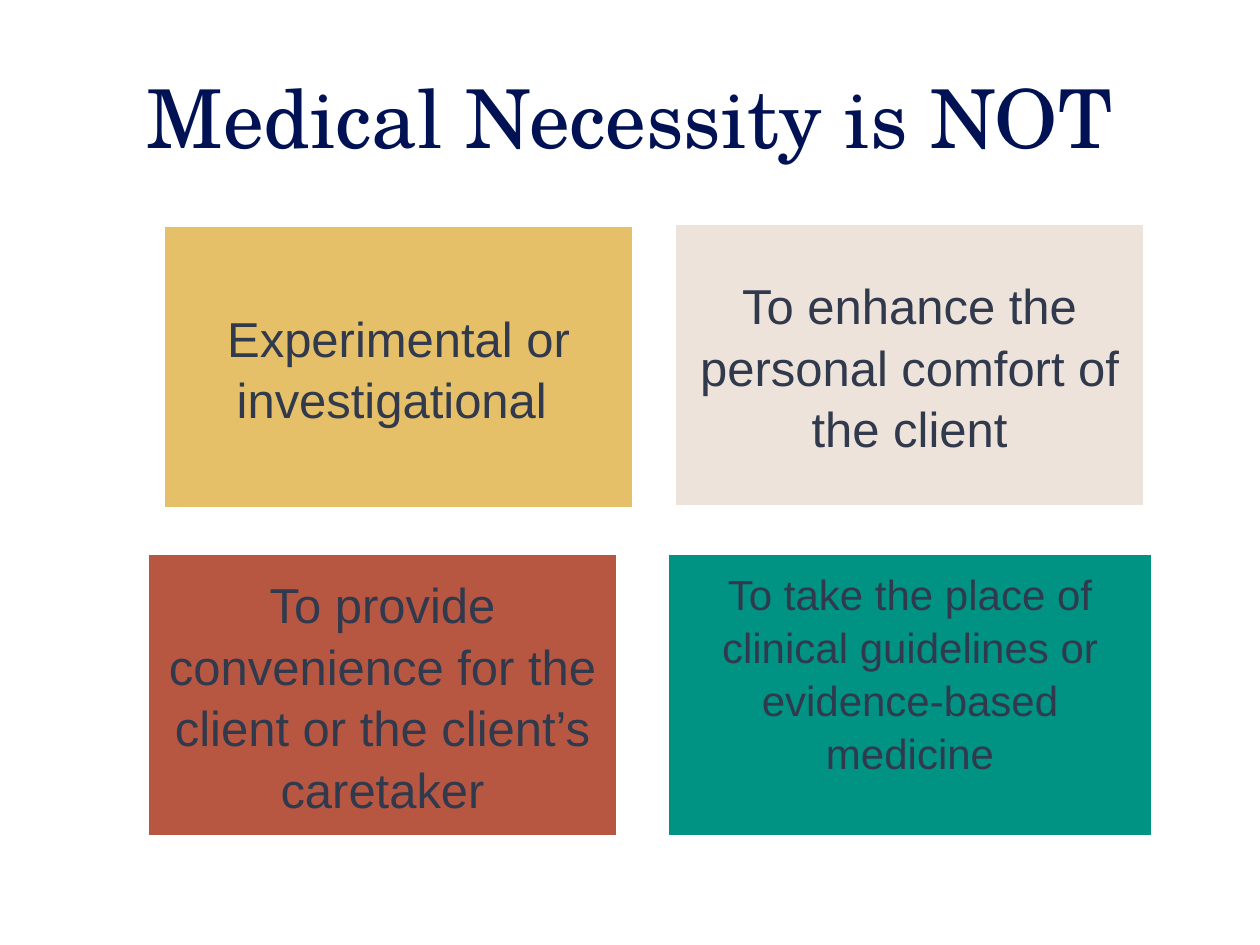
from dataclasses import dataclass

import pptx
import pptx.dml.color
import pptx.enum.shapes
import pptx.enum.text
import pptx.util

PX_PER_INCH = 126
EMU_PER_PX = 914400 / PX_PER_INCH
CARD_HEIGHT = 284
TEXT_COLOR = "31394D"
MIDDLE = pptx.enum.text.MSO_ANCHOR.MIDDLE
TOP = pptx.enum.text.MSO_ANCHOR.TOP


@dataclass
class Card:
    text: str
    fill: str
    left: int
    top: int
    width: int = 471
    size: int = 28
    inset: int = 15
    anchor: pptx.enum.text.MSO_ANCHOR = MIDDLE


CARDS = [
    Card("Experimental or investigational ", "E6C068", 163, 225),
    Card("To enhance the personal comfort of the client", "EDE3DA", 674, 223),
    Card("To provide convenience for the client or the client’s caretaker", "B85741", 147, 553),
    Card("To take the place of clinical guidelines or evidence-based medicine", "009384",
         667, 553, width=486, size=24, inset=13, anchor=TOP),
]


def px(length: int) -> pptx.util.Emu:
    return pptx.util.Emu(round(length * EMU_PER_PX))


def color(value: str) -> pptx.dml.color.RGBColor:
    return pptx.dml.color.RGBColor.from_string(value)


def set_attributes(target, values: dict) -> None:
    for name, value in values.items():
        setattr(target, name, value)


def write_text(shape, text: str, font_name: str, size: float, font_color: str,
               inset: int = 0, anchor=MIDDLE, line_spacing: float = 1.0) -> None:
    """Fill a shape with one centred paragraph."""
    frame = shape.text_frame
    margins = ("margin_left", "margin_top", "margin_right", "margin_bottom")
    set_attributes(frame, {
        **dict.fromkeys(margins, px(inset)),
        "word_wrap": True,
        "vertical_anchor": anchor,
    })
    paragraph = frame.paragraphs[0]
    set_attributes(paragraph, {
        "alignment": pptx.enum.text.PP_ALIGN.CENTER,
        "line_spacing": line_spacing,
    })
    run = paragraph.add_run()
    run.text = text
    set_attributes(run.font, {"name": font_name, "size": pptx.util.Pt(size)})
    run.font.color.rgb = color(font_color)


def add_title(slide) -> None:
    title = slide.shapes.add_textbox(px(32), px(60), px(1196), px(112))
    write_text(title, "Medical Necessity is NOT", "TeX Gyre Schola", 46.4, "001254")


def add_card(slide, card: Card) -> None:
    shape = slide.shapes.add_shape(
        pptx.enum.shapes.MSO_SHAPE.RECTANGLE,
        px(card.left), px(card.top), px(card.width), px(CARD_HEIGHT))
    shape.shadow.inherit = False
    shape.fill.solid()
    shape.fill.fore_color.rgb = color(card.fill)
    shape.line.color.rgb = color("FFFFFF")
    shape.line.width = pptx.util.Pt(2.75)
    write_text(shape, card.text, "Arial", card.size, TEXT_COLOR,
               card.inset, card.anchor, line_spacing=1.05)


def main() -> None:
    presentation = pptx.Presentation()
    set_attributes(presentation, {"slide_width": px(1260), "slide_height": px(945)})
    slide = presentation.slides.add_slide(presentation.slide_layouts[6])
    add_title(slide)
    for card in CARDS:
        add_card(slide, card)
    presentation.save("out.pptx")


if __name__ == "__main__":
    main()
